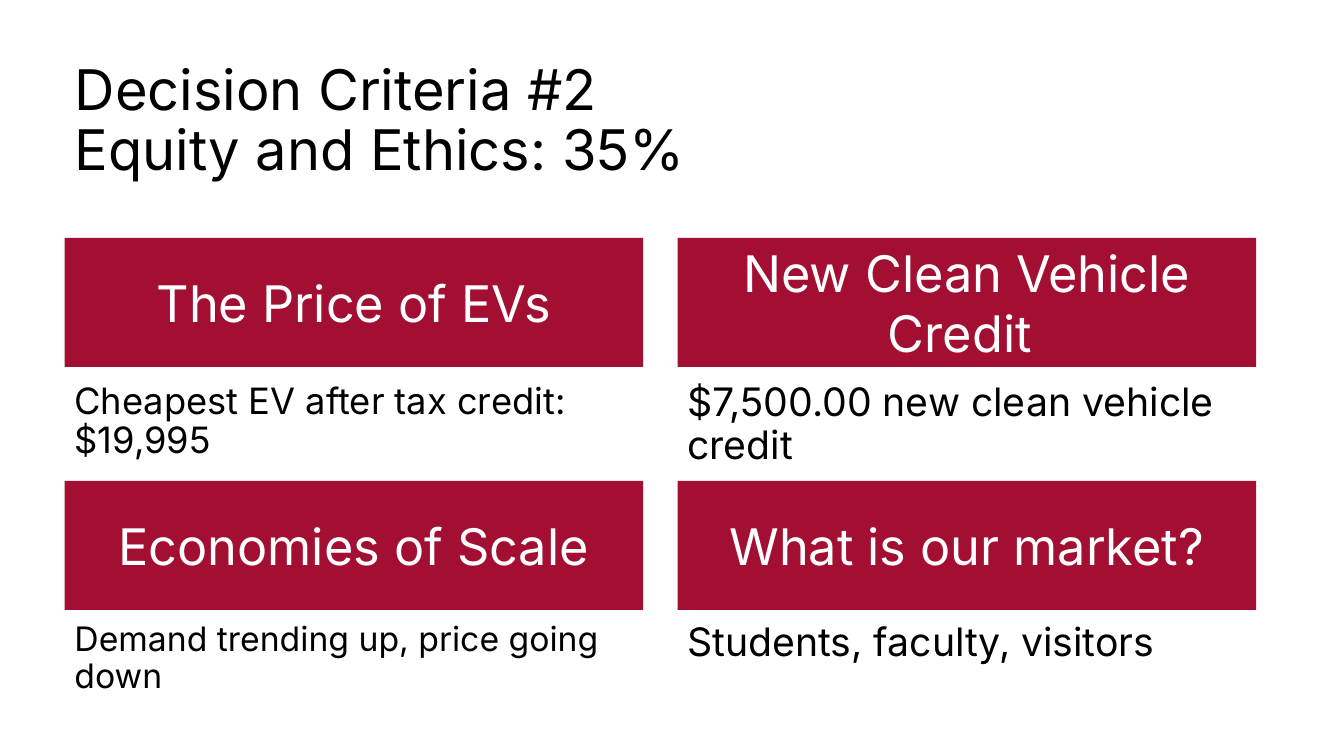
from dataclasses import dataclass

from pptx import Presentation
from pptx import util as u
from pptx.dml import color
from pptx.enum import shapes, text

FONT = "Inter"
CRIMSON, BLACK, WHITE = "A30F32", "000000", "FFFFFF"
LEFT, COLUMN_STEP, COLUMN_WIDTH = 0.64, 6.08, 5.74
BANNER_TOP, BANNER_STEP, BANNER_HEIGHT = 2.36, 2.41, 1.28
DETAIL_TOP, DETAIL_STEP, DETAIL_HEIGHT = 3.75, 2.38, 0.71


@dataclass(frozen=True)
class Criterion:
    column: int
    row: int
    heading: str
    detail: str
    detail_size: float


CRITERIA = [
    Criterion(0, 0, "The Price of EVs", "Cheapest EV after tax credit: $19,995", 25.9),
    Criterion(0, 1, "Economies of Scale", "Demand trending up, price going down", 24.1),
    Criterion(1, 0, "New Clean Vehicle Credit ", "$7,500.00 new clean vehicle credit", 28),
    Criterion(1, 1, "What is our market?", "Students, faculty, visitors", 28),
]


def rgb(value: str) -> color.RGBColor:
    return color.RGBColor.from_string(value)


def write(frame, wording: str, size: float, ink: str, align, anchor, spacing: float) -> None:
    frame.text = wording
    frame.word_wrap = True
    frame.auto_size = text.MSO_AUTO_SIZE.NONE
    frame.vertical_anchor = anchor
    for paragraph in frame.paragraphs:
        paragraph.alignment = align
        paragraph.line_spacing = spacing
        for run in paragraph.runs:
            run.font.name = FONT
            run.font.size = u.Pt(size)
            run.font.color.rgb = rgb(ink)


def add_title(slide) -> None:
    title = slide.shapes.title
    title.left, title.top = u.Inches(LEFT), u.Inches(0.55)
    title.width, title.height = u.Inches(12.16), u.Inches(1.33)
    write(title.text_frame, "Decision Criteria #2\vEquity and Ethics: 35%", 40, BLACK,
          text.PP_ALIGN.LEFT, text.MSO_ANCHOR.MIDDLE, 0.9)


def add_criterion(slide, criterion: Criterion) -> None:
    left = u.Inches(LEFT + criterion.column * COLUMN_STEP)
    width = u.Inches(COLUMN_WIDTH)
    banner_top = u.Inches(BANNER_TOP + criterion.row * BANNER_STEP)
    detail_top = u.Inches(DETAIL_TOP + criterion.row * DETAIL_STEP)

    banner = slide.shapes.add_shape(
        shapes.MSO_SHAPE.RECTANGLE, left, banner_top, width, u.Inches(BANNER_HEIGHT))
    banner.shadow.inherit = False
    banner.fill.solid()
    banner.fill.fore_color.rgb = rgb(CRIMSON)
    banner.line.fill.background()
    write(banner.text_frame, criterion.heading, 36, WHITE,
          text.PP_ALIGN.CENTER, text.MSO_ANCHOR.MIDDLE, 1.0)

    detail = slide.shapes.add_textbox(left, detail_top, width, u.Inches(DETAIL_HEIGHT))
    write(detail.text_frame, criterion.detail, criterion.detail_size, BLACK,
          text.PP_ALIGN.LEFT, text.MSO_ANCHOR.TOP, 0.9)


def main() -> None:
    deck = Presentation()
    deck.slide_width, deck.slide_height = u.Inches(13.33), u.Inches(7.5)
    slide = deck.slides.add_slide(deck.slide_layouts.get_by_name("Title Only"))
    add_title(slide)
    for criterion in CRITERIA:
        add_criterion(slide, criterion)
    deck.save("out.pptx")


if __name__ == "__main__":
    main()
